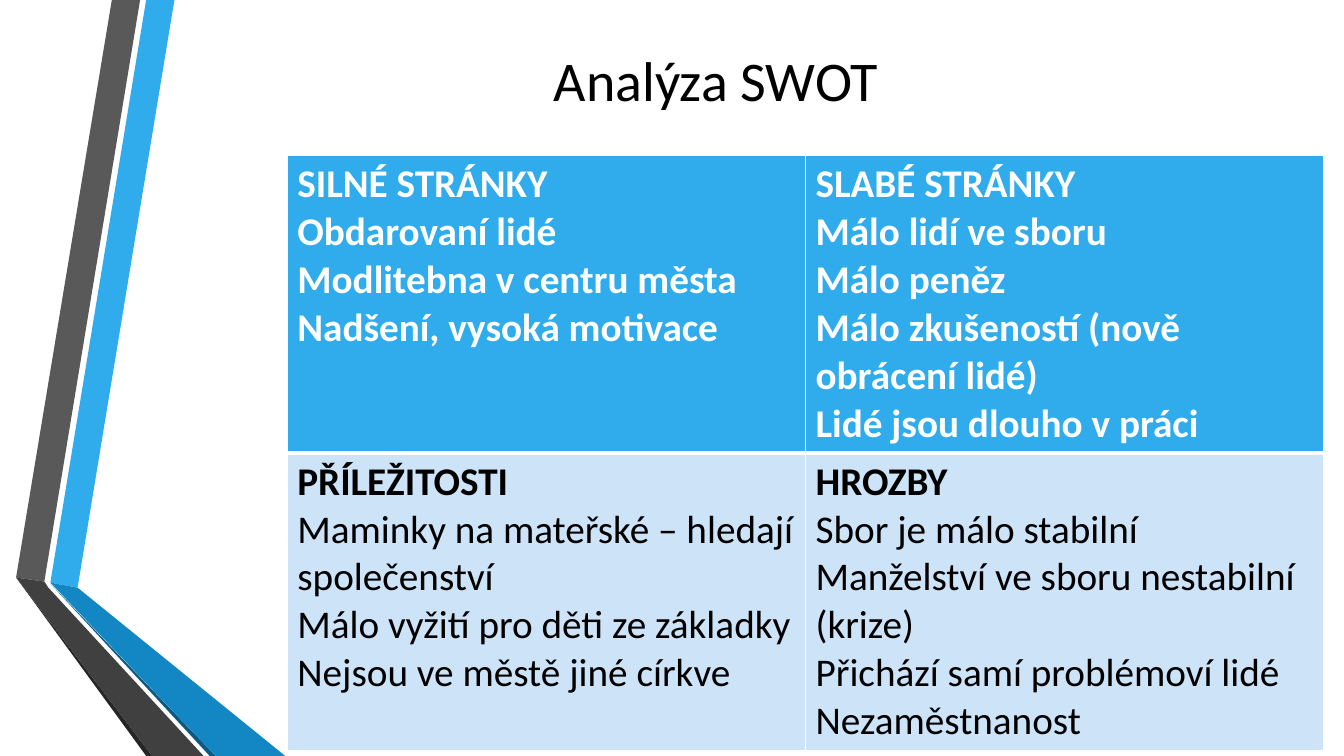
from dataclasses import dataclass

from lxml.etree import SubElement
from pptx import Presentation
from pptx.dml.color import RGBColor
from pptx.enum.text import MSO_ANCHOR, PP_ALIGN
from pptx.oxml.ns import qn
from pptx.util import Inches, Pt


@dataclass(frozen=True)
class Theme:
    font: str = "Calibri"
    title_size: int = 40
    body_size: int = 28
    black: str = "000000"
    white: str = "FFFFFF"
    blue: str = "30ACEC"
    pale_blue: str = "CDE3F8"
    mid_blue: str = "1287C3"
    deep_blue: str = "0C5A82"
    light_gray: str = "595959"
    mid_gray: str = "404040"
    dark_gray: str = "262626"


theme = Theme()


def format_font(font, size, color, bold):
    values = {"name": theme.font, "size": Pt(size), "bold": bold}
    for attribute, value in values.items():
        setattr(font, attribute, value)
    font.color.rgb = RGBColor.from_string(color)


def add_borders(cell, widths):
    """Draw white cell borders; widths are points for left, right, top, bottom."""
    properties = cell._tc.get_or_add_tcPr()
    for side, width in zip("LRTB", widths):
        line = SubElement(properties, qn(f"a:ln{side}"), w=str(Pt(width)))
        fill = SubElement(line, qn("a:solidFill"))
        SubElement(fill, qn("a:srgbClr"), val=theme.white)


presentation = Presentation()
presentation.slide_width = Inches(13.33)
presentation.slide_height = Inches(7.5)
slide = presentation.slides.add_slide(presentation.slide_layouts[5])

# Folded ribbons on the left, back to front
ribbons = [
    (theme.blue, [(0.5, 5.78), (0.77, 5.83), (1.73, 0), (1.45, 0)]),
    (theme.light_gray, [(1.39, 0), (1.11, 0), (0.16, 5.73), (0.44, 5.77)]),
    (theme.dark_gray, [(0.16, 5.73), (1.45, 7.5), (1.51, 7.5)]),
    (theme.deep_blue, [(0.5, 5.79), (2.08, 7.5), (2.14, 7.5)]),
    (theme.mid_blue, [(0.5, 5.78), (2.14, 7.5), (2.83, 7.5), (0.77, 5.83)]),
    (theme.mid_gray, [(2.02, 7.5), (0.48, 5.83), (0.44, 5.77), (0.16, 5.73), (1.51, 7.5)]),
]
for color, corners in ribbons:
    points = [(Inches(x), Inches(y)) for x, y in corners]
    outline = slide.shapes.build_freeform(*points[0])
    outline.add_line_segments(points[1:], close=True)
    ribbon = outline.convert_to_shape()
    ribbon.shadow.inherit = False
    ribbon.fill.solid()
    ribbon.fill.fore_color.rgb = RGBColor.from_string(color)
    ribbon.line.fill.background()

# Title
title = slide.shapes.title
title_place = {"left": 1.62, "top": 0.15, "width": 10.96, "height": 1.27}
for attribute, value in title_place.items():
    setattr(title, attribute, Inches(value))
title.text_frame.text = "Analýza SWOT"
title.text_frame.vertical_anchor = MSO_ANCHOR.MIDDLE
heading = title.text_frame.paragraphs[0]
heading.alignment = PP_ALIGN.CENTER
format_font(heading.runs[0].font, theme.title_size, theme.black, False)

# SWOT table: the first line of each cell is its heading
swot = [
    [
        ["SILNÉ STRÁNKY", "Obdarovaní lidé", "Modlitebna v centru města",
         "Nadšení, vysoká motivace"],
        ["SLABÉ STRÁNKY", "Málo lidí ve sboru", "Málo peněz",
         "Málo zkušeností (nově obrácení lidé)", "Lidé jsou dlouho v práci"],
    ],
    [
        ["PŘÍLEŽITOSTI", "Maminky na mateřské – hledají společenství",
         "Málo vyžití pro děti ze základky", "Nejsou ve městě jiné církve"],
        ["HROZBY", "Sbor je málo stabilní", "Manželství ve sboru nestabilní (krize)",
         "Přichází samí problémoví lidé", "Nezaměstnanost"],
    ],
]
row_formats = [
    {"fill": theme.blue, "color": theme.white, "bold": True, "borders": (1, 1, 1, 3)},
    {"fill": theme.pale_blue, "color": theme.black, "bold": False, "borders": (1, 1, 3, 1)},
]
swot_table = slide.shapes.add_table(
    2, 2, Inches(2.85), Inches(1.54), Inches(10.28), Inches(5.9)
).table
for row, (quadrants, row_format) in enumerate(zip(swot, row_formats)):
    for column, lines in enumerate(quadrants):
        cell = swot_table.cell(row, column)
        add_borders(cell, row_format["borders"])
        cell.fill.solid()
        cell.fill.fore_color.rgb = RGBColor.from_string(row_format["fill"])
        cell.text_frame.text = "\n".join(lines)
        for number, paragraph in enumerate(cell.text_frame.paragraphs):
            bold = row_format["bold"] or number == 0
            format_font(paragraph.runs[0].font, theme.body_size, row_format["color"], bold)

presentation.save("out.pptx")
